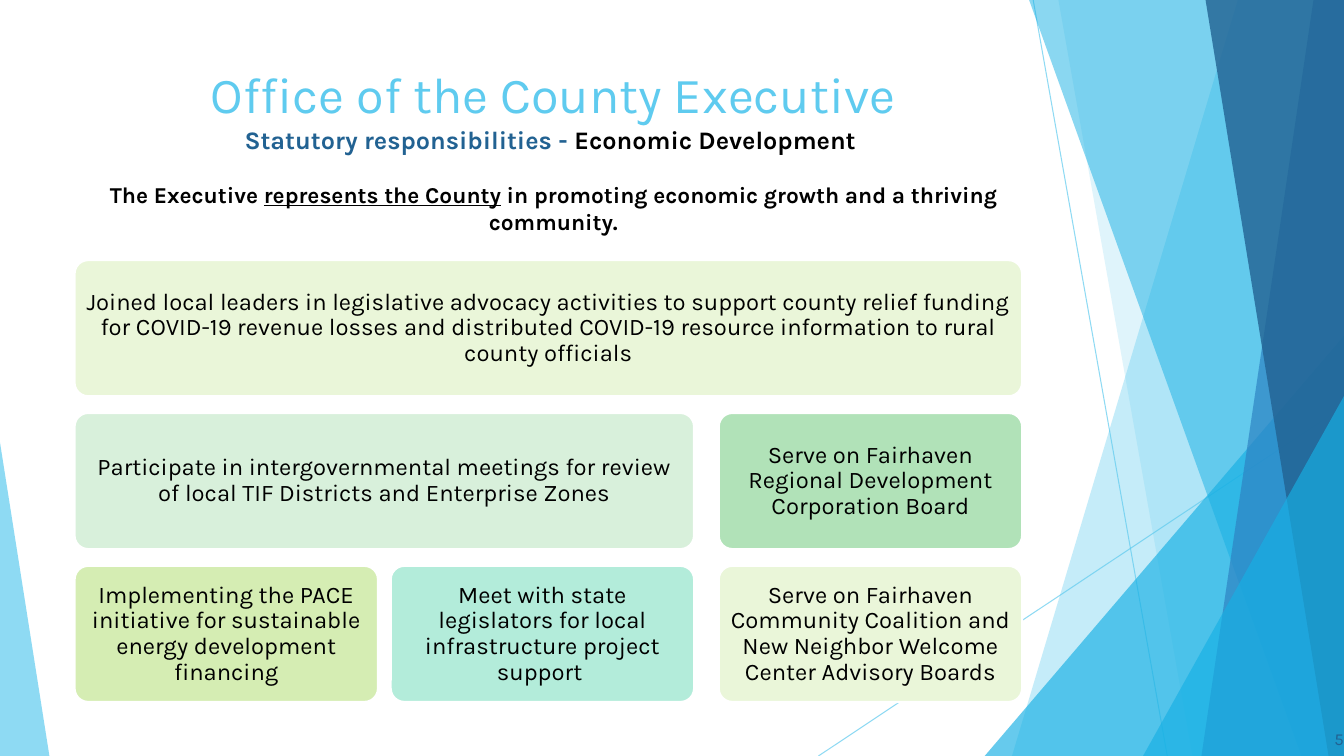
from pptx import Presentation
from pptx import util as u
from pptx.dml.color import RGBColor
from pptx.enum import shapes, text
from pptx.oxml import ns, xmlchemy

Pt = u.Pt
WIDTH, HEIGHT = 960, 540
FONT = "Karla"

BLACK = RGBColor(0x00, 0x00, 0x00)
WHITE = RGBColor(0xFF, 0xFF, 0xFF)
SKY = RGBColor(0x5F, 0xCB, 0xEF)
CYAN = RGBColor(0x17, 0xB0, 0xE4)
BLUE = RGBColor(0x2E, 0x83, 0xC3)
NAVY = RGBColor(0x22, 0x62, 0x92)
PALE_LIME = RGBColor(0xEA, 0xF6, 0xD9)
LIME = RGBColor(0xD5, 0xED, 0xB3)
PALE_GREEN = RGBColor(0xD8, 0xF0, 0xDB)
GREEN = RGBColor(0xB1, 0xE2, 0xB8)
MINT = RGBColor(0xB3, 0xEC, 0xDA)

TITLE_LINES = [
    (0, [("Office of the County Executive", 36, SKY, False, False)]),
    (0, [("Statutory responsibilities - ", 18, NAVY, True, False),
         ("Economic Development ", 18, BLACK, True, False)]),
    (19, [("The Executive ", 16.2, BLACK, True, False),
          ("represents the County", 16.2, BLACK, True, True),
          (" in promoting economic growth and a thriving community.",
           16.2, BLACK, True, False)]),
]

CARDS = [
    (0, 0, 2, PALE_LIME, "Joined local leaders in legislative advocacy activities to "
     "support county relief funding for COVID-19 revenue losses and distributed "
     "COVID-19 resource information to rural county officials"),
    (1, 0, 1, PALE_GREEN, "Participate in intergovernmental meetings for review of "
     "local TIF Districts and Enterprise Zones"),
    (2, 0, 0, LIME, "Implementing the PACE initiative for sustainable energy "
     "development financing"),
    (2, 1, 1, MINT, "Meet with state legislators for local infrastructure project support "),
    (1, 2, 2, GREEN, "Serve on Fairhaven Regional Development Corporation Board"),
    (2, 2, 2, PALE_LIME, "Serve on Fairhaven Community Coalition and New Neighbor "
     "Welcome Center Advisory Boards"),
]


def set_opacity(shape, percent):
    for color in shape._element.spPr.iter(ns.qn("a:srgbClr")):
        alpha = xmlchemy.OxmlElement("a:alpha")
        alpha.set("val", str(percent * 1000))
        color.append(alpha)


def paint(shape, color, opacity):
    shape.shadow.inherit = False
    shape.fill.solid()
    shape.fill.fore_color.rgb = color
    shape.line.fill.background()
    set_opacity(shape, opacity)


def add_ray(page, x1, y1, x2, y2):
    ray = page.shapes.add_connector(
        shapes.MSO_CONNECTOR.STRAIGHT, Pt(x1), Pt(y1), Pt(x2), Pt(y2))
    ray.line.color.rgb = SKY
    ray.line.width = Pt(0.75)
    set_opacity(ray, 70)
    ray._element.spPr.append(xmlchemy.OxmlElement("a:effectLst"))


def add_band(page, top_x, bottom_x, right, height, color, opacity):
    builder = page.shapes.build_freeform(Pt(top_x), 0)
    corners = [(right, 0), (right, height), (bottom_x, height)]
    builder.add_line_segments([(Pt(x), Pt(y)) for x, y in corners])
    paint(builder.convert_to_shape(), color, opacity)


def add_corner(page, left, top, right, bottom, apex, color, opacity):
    corner = page.shapes.add_shape(
        shapes.MSO_SHAPE.ISOSCELES_TRIANGLE,
        Pt(left), Pt(top), Pt(right - left), Pt(bottom - top))
    corner.adjustments[0] = apex
    paint(corner, color, opacity)


def add_decoration(page, width, height):
    add_ray(page, 738, 0, 833.8, height)
    add_ray(page, width, 290.2, 584.6, height)
    add_band(page, 884.2, 722.9, width, height, SKY, 36)
    add_band(page, 756, 851.8, width, height, SKY, 20)
    add_corner(page, 703.4, 239.8, width, height, 1, CYAN, 66)
    add_band(page, 735.1, 929.5, width, height, CYAN, 50)
    add_band(page, 938.2, 858.2, width, height, BLUE, 70)
    add_band(page, 861.1, 949, width, height, NAVY, 80)
    add_corner(page, 816.5, 283, width, height, 1, CYAN, 66)
    add_corner(page, 0, 316.1, 35.3, height, 0, SKY, 70)


def add_span(para, wording, size, color, bold=False, underline=False):
    span = para.add_run()
    span.text = wording
    span.font.name = FONT
    span.font.size = Pt(size)
    span.font.color.rgb = color
    span.font.bold = bold
    span.font.underline = underline


def add_title(page, left, top, width, height):
    title = page.shapes.title
    title.left, title.top = Pt(left), Pt(top)
    title.width, title.height = Pt(width), Pt(height)
    frame = title.text_frame
    frame.word_wrap = True
    frame.auto_size = text.MSO_AUTO_SIZE.NONE
    frame.vertical_anchor = text.MSO_ANCHOR.TOP
    for index, (space, spans) in enumerate(TITLE_LINES):
        para = frame.paragraphs[0] if index == 0 else frame.add_paragraph()
        para.alignment = text.PP_ALIGN.CENTER
        para.space_before = Pt(space)
        for details in spans:
            add_span(para, *details)


def add_card(page, left, top, width, height, color, wording):
    card = page.shapes.add_shape(
        shapes.MSO_SHAPE.ROUNDED_RECTANGLE, Pt(left), Pt(top), Pt(width), Pt(height))
    card.adjustments[0] = 0.1
    card.shadow.inherit = False
    card.fill.solid()
    card.fill.fore_color.rgb = color
    card.line.color.rgb = WHITE
    card.line.width = Pt(1.5)
    frame = card.text_frame
    frame.word_wrap = True
    frame.vertical_anchor = text.MSO_ANCHOR.MIDDLE
    frame.margin_left = frame.margin_right = Pt(5)
    frame.margin_top = frame.margin_bottom = Pt(5)
    para = frame.paragraphs[0]
    para.alignment = text.PP_ALIGN.CENTER
    para.line_spacing = 0.9
    add_span(para, wording, 17, BLACK)


def add_cards(page, left, top, width, height):
    inner_gap, outer_gap, row_gap = 9.1, 17.6, 12
    card_width = (width - inner_gap - outer_gap) / 3
    card_height = (height - 2 * row_gap) / 3
    columns = [left, left + card_width + inner_gap, left + width - card_width]
    for row, first, last, color, wording in CARDS:
        add_card(page, columns[first], top + row * (card_height + row_gap),
                 columns[last] + card_width - columns[first], card_height,
                 color, wording)


def add_page_number(page, left, top, width, height):
    box = page.shapes.add_textbox(Pt(left), Pt(top), Pt(width), Pt(height))
    frame = box.text_frame
    frame.word_wrap = False
    frame.vertical_anchor = text.MSO_ANCHOR.MIDDLE
    frame.margin_left = frame.margin_right = 0
    frame.margin_top = frame.margin_bottom = 0
    para = frame.paragraphs[0]
    para.alignment = text.PP_ALIGN.RIGHT
    add_span(para, "5", 12, NAVY)


def main():
    deck = Presentation()
    deck.slide_width, deck.slide_height = Pt(WIDTH), Pt(HEIGHT)
    page = deck.slides.add_slide(deck.slide_layouts[5])
    add_decoration(page, WIDTH, HEIGHT)
    add_title(page, 24.5, 41.8, 741.6, 133.2)
    add_cards(page, 53.3, 185.8, 676.8, 315.6)
    add_page_number(page, 940, 520, 20, 16)
    deck.save("out.pptx")


if __name__ == "__main__":
    main()
